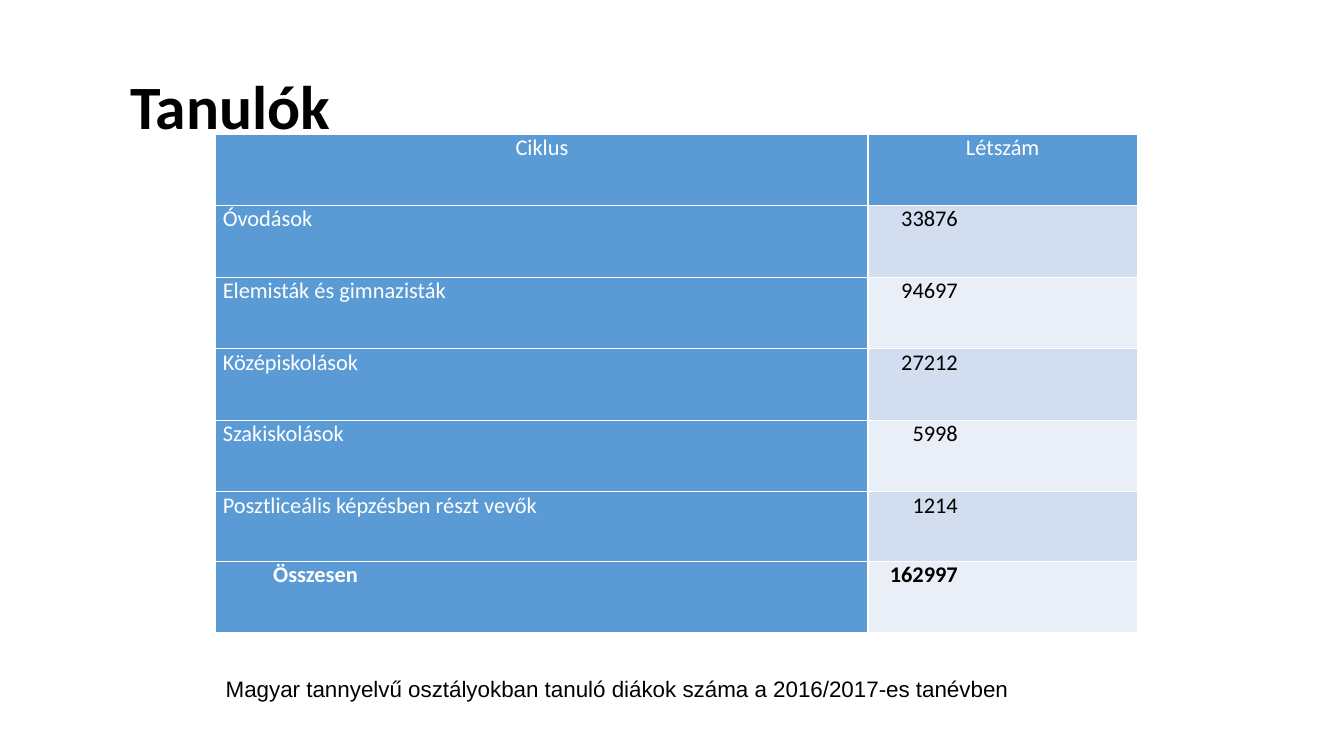
from lxml.etree import SubElement
from pptx import Presentation
from pptx.dml.color import RGBColor
from pptx.enum.text import MSO_ANCHOR, MSO_AUTO_SIZE, PP_ALIGN
from pptx.oxml.ns import qn
from pptx.util import Emu, Pt

EMU_PER_PX = 9144
BLACK = RGBColor(0x00, 0x00, 0x00)
WHITE = RGBColor(0xFF, 0xFF, 0xFF)
BLUE = RGBColor(0x5B, 0x9B, 0xD5)
BANDS = [RGBColor(0xD2, 0xDE, 0xEF), RGBColor(0xEA, 0xEF, 0xF7)]

HEADERS = ["Ciklus", "Létszám"]
STUDENTS = [
    ("Óvodások", "33876"),
    ("Elemisták és gimnazisták", "94697"),
    ("Középiskolások", "27212"),
    ("Szakiskolások", "5998"),
    ("Posztliceális képzésben részt vevők", "1214"),
    ("Összesen", "162997"),
]
COLUMN_WIDTHS = [647, 267]
ROW_HEIGHTS = [71, 71, 71, 71, 71, 69, 71]
CELL_INSET = 7
TOTAL_INSET = 57
NUMBER_INSET = 178


def px(length):
    return Emu(length * EMU_PER_PX)


def apply_format(target, values):
    for name, value in values.items():
        setattr(target, name, value)


class SlideBuilder:
    def __init__(self, deck):
        self.page = deck.slides.add_slide(deck.slide_layouts[5])
        self.cell_font = {"name": "Calibri", "size": Pt(16), "bold": False}
        self.title_font = {"name": "Calibri", "size": Pt(44), "bold": True}
        self.caption_font = {"name": "Arial", "size": Pt(16), "bold": False}

    def add_text(self, frame, text, font, color=BLACK, align=PP_ALIGN.LEFT):
        para = frame.paragraphs[0]
        apply_format(para, {"alignment": align, "line_spacing": 1.0})
        span = para.add_run()
        span.text = text
        apply_format(span.font, font)
        span.font.color.rgb = color

    def title(self, text, left, top, width, height):
        box = self.page.shapes.title
        apply_format(box, {"left": px(left), "top": px(top),
                           "width": px(width), "height": px(height)})
        apply_format(box.text_frame, {"word_wrap": True,
                                      "auto_size": MSO_AUTO_SIZE.NONE,
                                      "vertical_anchor": MSO_ANCHOR.TOP})
        self.add_text(box.text_frame, text, self.title_font)

    def caption(self, text, left, top, width, height):
        box = self.page.shapes.add_textbox(px(left), px(top), px(width), px(height))
        apply_format(box.text_frame, {"word_wrap": True,
                                      "vertical_anchor": MSO_ANCHOR.MIDDLE})
        self.add_text(box.text_frame, text, self.caption_font)

    def borders(self, cell):
        properties = cell._tc.get_or_add_tcPr()
        for side in ("lnL", "lnR", "lnT", "lnB"):
            line = SubElement(properties, qn(f"a:{side}"), w=str(Pt(1)))
            fill = SubElement(line, qn("a:solidFill"))
            SubElement(fill, qn("a:srgbClr"), val=str(WHITE))

    def cell(self, cell, text, fill, color, align, bold=False,
             left=CELL_INSET, right=CELL_INSET):
        self.borders(cell)
        cell.fill.solid()
        cell.fill.fore_color.rgb = fill
        apply_format(cell, {"margin_left": px(left), "margin_right": px(right),
                            "margin_top": 0, "margin_bottom": 0,
                            "vertical_anchor": MSO_ANCHOR.TOP})
        self.add_text(cell.text_frame, text, {**self.cell_font, "bold": bold}, color, align)

    def table(self, left, top):
        table = self.page.shapes.add_table(
            len(ROW_HEIGHTS), len(COLUMN_WIDTHS), px(left), px(top),
            px(sum(COLUMN_WIDTHS)), px(sum(ROW_HEIGHTS))).table
        for column, width in zip(table.columns, COLUMN_WIDTHS):
            column.width = px(width)
        for row, height in zip(table.rows, ROW_HEIGHTS):
            row.height = px(height)
        for index, header in enumerate(HEADERS):
            self.cell(table.cell(0, index), header, BLUE, WHITE, PP_ALIGN.CENTER)
        for index, (cycle, count) in enumerate(STUDENTS, start=1):
            total = index == len(STUDENTS)
            self.cell(table.cell(index, 0), cycle, BLUE, WHITE, PP_ALIGN.LEFT,
                      total, left=TOTAL_INSET if total else CELL_INSET)
            self.cell(table.cell(index, 1), count, BANDS[(index - 1) % 2], BLACK,
                      PP_ALIGN.RIGHT, total, right=NUMBER_INSET)


def main():
    deck = Presentation()
    apply_format(deck, {"slide_width": px(1333), "slide_height": px(750)})
    builder = SlideBuilder(deck)
    builder.title("Tanulók", 119, 62, 1080, 84)
    builder.table(214, 133)
    builder.caption("Magyar tannyelvű osztályokban tanuló diákok száma a 2016/2017-es tanévben",
                    214, 665, 824, 37)
    deck.save("out.pptx")


if __name__ == "__main__":
    main()
